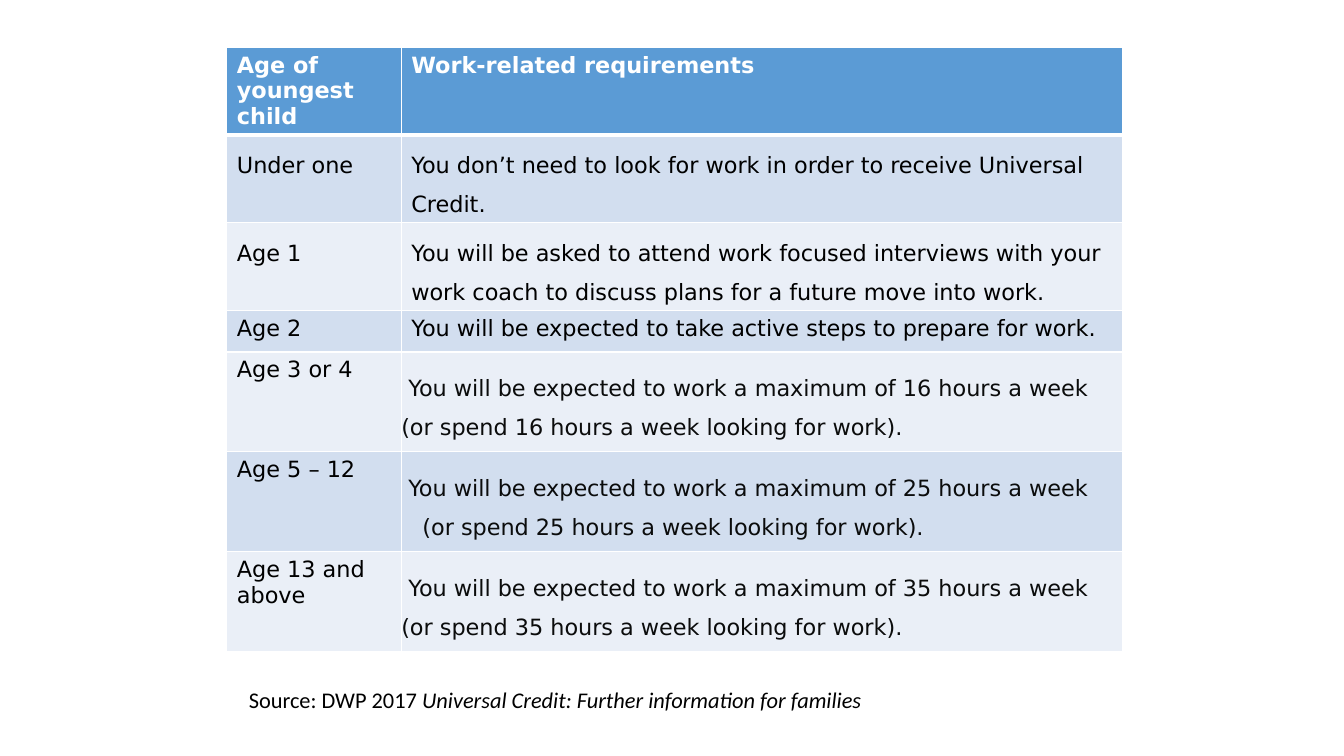
from lxml import etree
from pptx import Presentation
from pptx.dml.color import RGBColor
from pptx.enum.text import MSO_ANCHOR
from pptx.oxml.ns import qn
from pptx.util import Inches, Pt

BOTTOM = MSO_ANCHOR.BOTTOM

HEADER = ("Age of youngest child", "Work-related requirements")
HOURS = ("You will be expected to work a maximum of {0} hours a week "
         "(or spend {0} hours a week looking for work).")
ROWS = [
    ("Under one", "You don’t need to look for work in order to receive Universal Credit."),
    ("Age 1", "You will be asked to attend work focused interviews with your work coach "
              "to discuss plans for a future move into work."),
    ("Age 2", "You will be expected to take active steps to prepare for work."),
    ("Age 3 or 4", HOURS.format(16)),
    ("Age 5 – 12", HOURS.format(25)),
    ("Age 13 and above", HOURS.format(35)),
]
SOURCE = [("Source: DWP 2017 ", False),
          ("Universal Credit: Further information for families", True)]

COL_WIDTHS = (1.73, 7.15)
ROW_HEIGHTS = (0.87, 0.87, 0.87, 0.41, 0.99, 0.99, 0.99)
BANDS = ("EAEFF7", "D2DEEF")
HEAD_FILL, WHITE, BLACK, INK = "5B9BD5", "FFFFFF", "000000", "0B0C0C"
SPACED_ROWS = (1, 2)
FIRST_HOURS_ROW, HANGING_ROW = 4, 5
HOURS_CELL = {"margin_left": 0, "margin_top": Inches(0.11),
              "margin_right": Inches(0.11), "margin_bottom": Inches(0.11)}


def color(value):
    return RGBColor.from_string(value)


def set_attrs(obj, values):
    for name, value in values.items():
        setattr(obj, name, value)


def add_run(p, text, font, hex_color, **extra):
    r = p.add_run()
    r.text = text
    set_attrs(r.font, {"name": font, "size": Pt(16), **extra})
    r.font.color.rgb = color(hex_color)


def set_borders(cell, bottom):
    tcPr = cell._tc.get_or_add_tcPr()
    for side, width in (("L", 1), ("R", 1), ("T", 1), ("B", bottom)):
        ln = etree.SubElement(tcPr, qn(f"a:ln{side}"), w=str(Pt(width)))
        fill = etree.SubElement(ln, qn("a:solidFill"))
        etree.SubElement(fill, qn("a:srgbClr"), val=WHITE)


def set_indent(p, left, first):
    pPr = p._p.get_or_add_pPr()
    pPr.set("marL", str(Inches(left)))
    pPr.set("indent", str(Inches(first)))


def fill_cell(cell, row, col, text):
    header = row == 0
    hours = row >= FIRST_HOURS_ROW and col == 1
    set_borders(cell, 3 if header else 1)
    cell.fill.solid()
    cell.fill.fore_color.rgb = color(HEAD_FILL if header else BANDS[row % 2])
    p = cell.text_frame.paragraphs[0]
    if hours:
        set_attrs(cell, HOURS_CELL)
        set_attrs(p, {"line_spacing": 1.5, "space_before": Pt(23)})
        if row == HANGING_ROW:
            set_indent(p, 0.21, -0.14)
        else:
            set_indent(p, 0, 0.07)
    elif row in SPACED_ROWS:
        p.line_spacing = 1.5
    ink = WHITE if header else INK if hours else BLACK
    add_run(p, text, "DejaVu Sans", ink, bold=header)


def add_requirements(s):
    rows = [HEADER, *ROWS]
    table = s.shapes.add_table(
        len(rows), len(HEADER), Inches(2.25), Inches(0.47),
        Inches(sum(COL_WIDTHS)), Inches(sum(ROW_HEIGHTS))).table
    for column, width in zip(table.columns, COL_WIDTHS):
        column.width = Inches(width)
    for i, (texts, height) in enumerate(zip(rows, ROW_HEIGHTS)):
        table.rows[i].height = Inches(height)
        for j, text in enumerate(texts):
            fill_cell(table.cell(i, j), i, j, text)


def add_source(s):
    tf = s.shapes.add_textbox(Inches(2.37), Inches(6.48),
                              Inches(9.44), Inches(0.64)).text_frame
    set_attrs(tf, {"word_wrap": True, "vertical_anchor": BOTTOM})
    for text, italic in SOURCE:
        add_run(tf.paragraphs[0], text, "Calibri", BLACK, italic=italic)


def main():
    prs = Presentation()
    set_attrs(prs, {"slide_width": Inches(13.33), "slide_height": Inches(7.5)})
    s = prs.slides.add_slide(prs.slide_layouts[6])
    add_requirements(s)
    add_source(s)
    prs.save("out.pptx")


if __name__ == "__main__":
    main()
